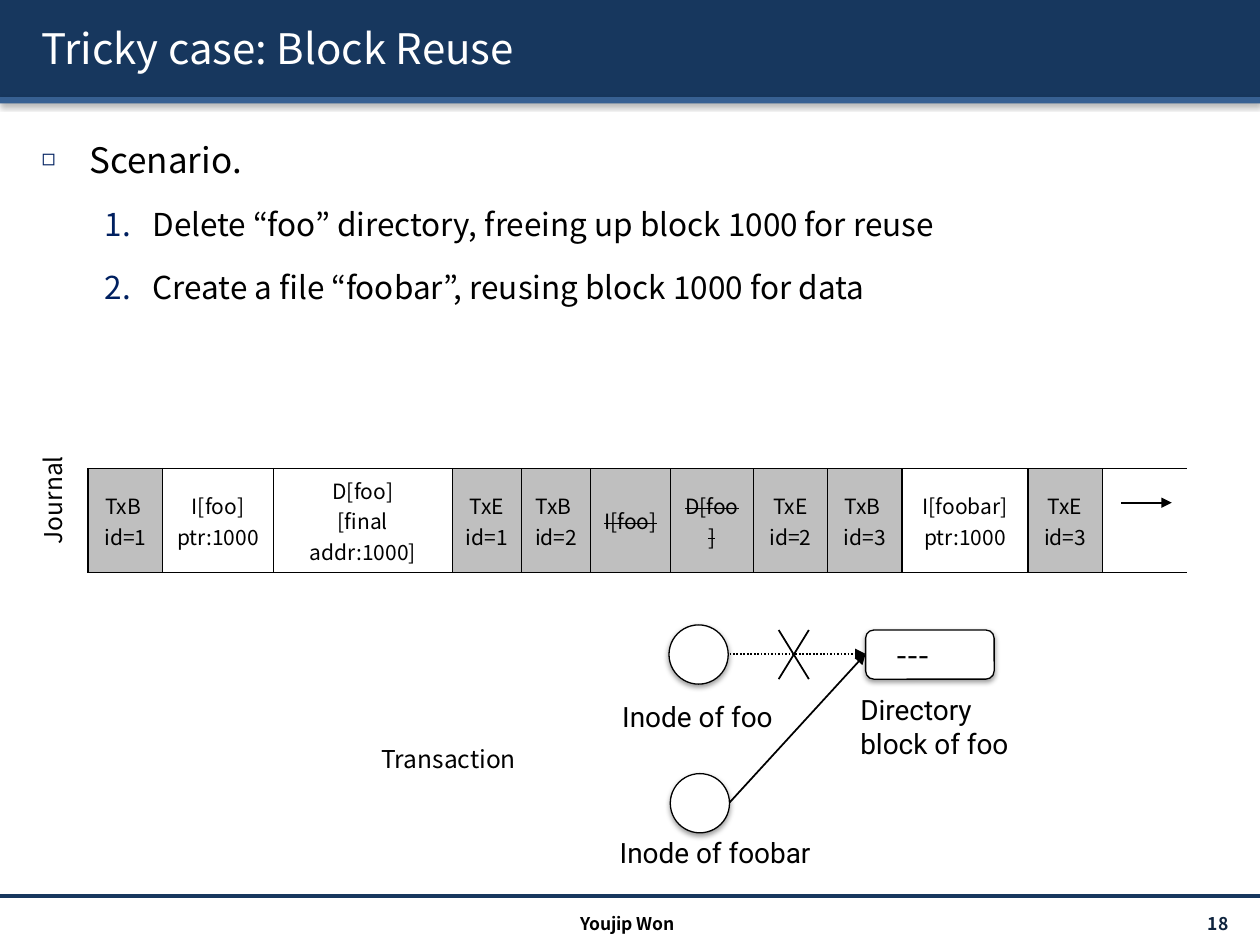
import pptx
import pptx.dml.color
import pptx.enum.dml
import pptx.enum.shapes
import pptx.enum.text
import pptx.oxml
import pptx.oxml.ns
import pptx.util

SANS, ROBOTO = "Noto Sans CJK KR", "Roboto"
BLACK, WHITE, GREY, NAVY = "000000", "FFFFFF", "BFBFBF", "17375E"
SHAPE = pptx.enum.shapes.MSO_SHAPE
ALIGN = pptx.enum.text.PP_ALIGN
ANCHOR = pptx.enum.text.MSO_ANCHOR
FIT = pptx.enum.text.MSO_AUTO_SIZE
COLUMNS, ROWS = 100, 75  # square grid over the slide
UNIT = pptx.util.Inches(0.1)

SHADOW = ('<a:effectLst><a:outerShdw blurRad="{blur}" dist="{distance}" dir="{angle}" '
          'rotWithShape="0"><a:srgbClr val="000000"><a:alpha val="{alpha}"/>'
          '</a:srgbClr></a:outerShdw></a:effectLst>')
SOFT_SHADOW = SHADOW.format(blur=39400, distance=20300, angle=5400000, alpha=38000)
TEXT_SHADOW = SHADOW.format(blur=12700, distance=19050, angle=2700000, alpha=100000)

# width in columns, lines, fill, border width
JOURNAL = [
    (5.9, ["TxB ", "id=1"], GREY, 1),
    (8.8, ["I[foo]", "ptr:1000"], WHITE, 1),
    (14.2, ["D[foo]", "[final addr:1000]"], WHITE, 1),
    (5.5, ["TxE", "id=1"], GREY, 0.75),
    (5.5, ["TxB ", "id=2"], GREY, 0.75),
    (6.3, ["I[foo]"], GREY, 0.75),
    (6.6, ["D[foo]"], GREY, 0.75),
    (5.9, ["TxE", "id=2"], GREY, 0.75),
    (5.9, ["TxB ", "id=3"], GREY, 0.75),
    (10, ["I[foobar]", "ptr:1000"], WHITE, 0.75),
    (5.9, ["TxE", "id=3"], GREY, 0.75),
    (6.7, [], WHITE, 1),
]
STRUCK = (5, 6)


def color(value):
    return pptx.dml.color.RGBColor.from_string(value)


def grid(*lengths):
    return [round(length * UNIT) for length in lengths]


def xml(markup):
    head, mark, rest = markup.partition(" " if " " in markup else "/")
    namespace = pptx.oxml.ns.nsdecls("a")
    return pptx.oxml.parse_xml(f"{head} {namespace}{mark}{rest}")


def effects(parent, markup):
    return parent.append(pptx.oxml.parse_xml(
        markup.replace("<a:effectLst", "<a:effectLst " + pptx.oxml.ns.nsdecls("a"), 1)))


def write(para, text, size=14, font=SANS, ink=BLACK, bold=False, align=ALIGN.LEFT,
          strike=False):
    para.alignment = align
    span = para.add_run()
    span.text = text
    span.font.size, span.font.name, span.font.bold = pptx.util.Pt(size), font, bold
    span.font.color.rgb = color(ink)
    if strike:
        span.font._element.set("strike", "sngStrike")
    return span


def add_label(page, place, text, grow=True, anchor=ANCHOR.TOP, turn=0, **style):
    box = page.shapes.add_textbox(*grid(*place))
    frame = box.text_frame
    frame.word_wrap = True
    frame.auto_size = FIT.SHAPE_TO_FIT_TEXT if grow else FIT.NONE
    frame.vertical_anchor = anchor
    box.rotation = turn
    write(frame.paragraphs[0], text, **style)


def add_block(page, kind, place, fill=WHITE, outline=True):
    block = page.shapes.add_shape(kind, *grid(*place))
    block.fill.solid()
    block.fill.fore_color.rgb = color(fill)
    if outline:
        block.line.color.rgb = color(BLACK)
        block.line.width = pptx.util.Pt(0.75)
    else:
        block.line.fill.background()
    effects(block._element.spPr, SOFT_SHADOW)


def add_line(page, start, end, ink=BLACK, width=1, arrow=False, dotted=False):
    line = page.shapes.add_connector(
        pptx.enum.shapes.MSO_CONNECTOR.STRAIGHT, *grid(*start, *end))
    line.line.color.rgb = color(ink)
    line.line.width = pptx.util.Pt(width)
    if dotted:
        line.line.dash_style = pptx.enum.dml.MSO_LINE.ROUND_DOT
    if arrow:
        line.line._get_or_add_ln().append(xml('<a:tailEnd type="triangle"/>'))
    effects(line._element.spPr, "<a:effectLst/>")


def add_bullet(para, bullet, indent):
    """Hang the bullet 0.38 inch left of the text indent."""
    properties = para._p.get_or_add_pPr()
    properties.set("marL", str(pptx.util.Inches(indent)))
    properties.set("indent", str(-pptx.util.Inches(0.38)))
    ink = xml('<a:buClr val=""/>')
    del ink.attrib["val"]
    ink.append(xml('<a:srgbClr val="002060"/>'))
    properties.append(ink)
    for markup in bullet:
        properties.append(xml(markup))


def fill_title(title, text):
    title.left, title.top, title.width, title.height = grid(2.3, 0.6, 96.1, 6.4)
    title.text_frame.vertical_anchor = ANCHOR.MIDDLE
    title.text_frame.auto_size = FIT.NONE
    span = write(title.text_frame.paragraphs[0], text, size=24, ink=WHITE)
    properties = span.font._element
    effects(properties, TEXT_SHADOW)
    properties.insert(1, properties[-1])


def fill_body(body, heading, steps):
    body.left, body.top, body.width, body.height = grid(2.3, 8.8, 96.1, 60.2)
    frame = body.text_frame
    frame.auto_size = FIT.NONE
    square = ['<a:buSzPct val="65000"/>', '<a:buChar char="◻"/>']
    number = ['<a:buFont typeface="+mj-lt"/>', '<a:buAutoNum type="arabicPeriod"/>']
    for index, text in enumerate([heading, *steps]):
        para = frame.add_paragraph() if index else frame.paragraphs[0]
        para.level = 1 if index else 0
        add_bullet(para, number if index else square, 0.88 if index else 0.38)
        para.line_spacing = 1.5
        para.space_before = pptx.util.Pt(3.6 if index else 0)
        write(para, text, size=18 if index else 20)


def set_borders(cell, width, sides):
    properties = cell._tc.get_or_add_tcPr()
    for index, side in enumerate("LRTB"):
        border = xml(f'<a:ln{side} w="{pptx.util.Pt(width)}"/>')
        if side in sides:
            fill = xml('<a:solidFill val=""/>')
            del fill.attrib["val"]
            fill.append(xml(f'<a:srgbClr val="{BLACK}"/>'))
        else:
            fill = xml("<a:noFill/>")
        border.append(fill)
        properties.insert(index, border)


def add_journal(page, left, top, height):
    width = sum(entry[0] for entry in JOURNAL)
    table = page.shapes.add_table(
        1, len(JOURNAL), *grid(left, top, width, height)).table
    table.first_row = table.horz_banding = False
    for index, (columns, lines, fill, border) in enumerate(JOURNAL):
        table.columns[index].width = grid(columns)[0]
        cell = table.cell(0, index)
        cell.vertical_anchor = ANCHOR.MIDDLE
        cell.fill.solid()
        cell.fill.fore_color.rgb = color(fill)
        set_borders(cell, border, "LRTB" if lines else "LTB")
        for row, text in enumerate(lines):
            frame = cell.text_frame
            para = frame.add_paragraph() if row else frame.paragraphs[0]
            write(para, text, size=12, align=ALIGN.CENTER, strike=index in STRUCK)


def add_inodes(page):
    for left, top in ((53.1, 49.6), (53.2, 61.4)):
        add_block(page, SHAPE.OVAL, (left, top, 4.7, 4.7))
    add_block(page, SHAPE.ROUNDED_RECTANGLE, (68.7, 50, 10.2, 3.9))
    for place, text in (((48.4, 55, 15.7, 3.7), "Inode of foo"),
                        ((67.3, 54.5, 15.7, 6.4), "Directory block of foo"),
                        ((48.2, 65.8, 22.3, 3.7), "Inode of foobar")):
        add_label(page, place, text, size=16, font=ROBOTO)
    target = (68.7, 51.9)
    add_line(page, (57.9, 51.9), target, arrow=True, dotted=True)
    add_line(page, (57.9, 63.7), target, arrow=True)
    for start, end in ((61.8, 64.2), (64.2, 61.8)):
        add_line(page, (start, 50), (end, 53.9))
    add_label(page, (70.2, 49.9, 8.3, 4), "---", size=18)


def main():
    deck = pptx.Presentation()
    deck.slide_width, deck.slide_height = grid(COLUMNS, ROWS)
    page = deck.slides.add_slide(deck.slide_layouts[1])
    title, body = page.placeholders
    add_block(page, SHAPE.RECTANGLE, (0, 0, COLUMNS, 7.7), NAVY, outline=False)
    add_block(page, SHAPE.RECTANGLE, (0, 7.7, COLUMNS, 0.5), "376092", outline=False)
    add_line(page, (0, 71.1), (COLUMNS, 71.1), ink=NAVY, width=2)
    for holder in (title, body):  # bring the text in front of the header bars
        holder._element.getparent().append(holder._element)
    fill_title(title, "Tricky case: Block Reuse")
    fill_body(body, "Scenario.", [
        "Delete “foo” directory, freeing up block 1000 for reuse",
        "Create a file “foobar”, reusing block 1000 for data"])
    add_label(page, (87.1, 72.1, 11.7, 2.4), "18 ", grow=False, anchor=ANCHOR.MIDDLE,
              size=10, ink="0F243E", bold=True, align=ALIGN.RIGHT)
    add_label(page, (33.2, 72, 33.2, 2.4), "Youjip Won", grow=False,
              size=10, bold=True, align=ALIGN.CENTER)
    add_journal(page, 7, 37.2, 5.5)
    add_line(page, (89, 39.9), (93, 39.9), arrow=True)
    add_label(page, (-0.4, 38, 9.3, 3.4), "Journal", turn=270, align=ALIGN.CENTER)
    add_label(page, (29.3, 58.6, 14.3, 3.4), "Transaction")
    add_inodes(page)
    deck.save("out.pptx")


if __name__ == "__main__":
    main()
